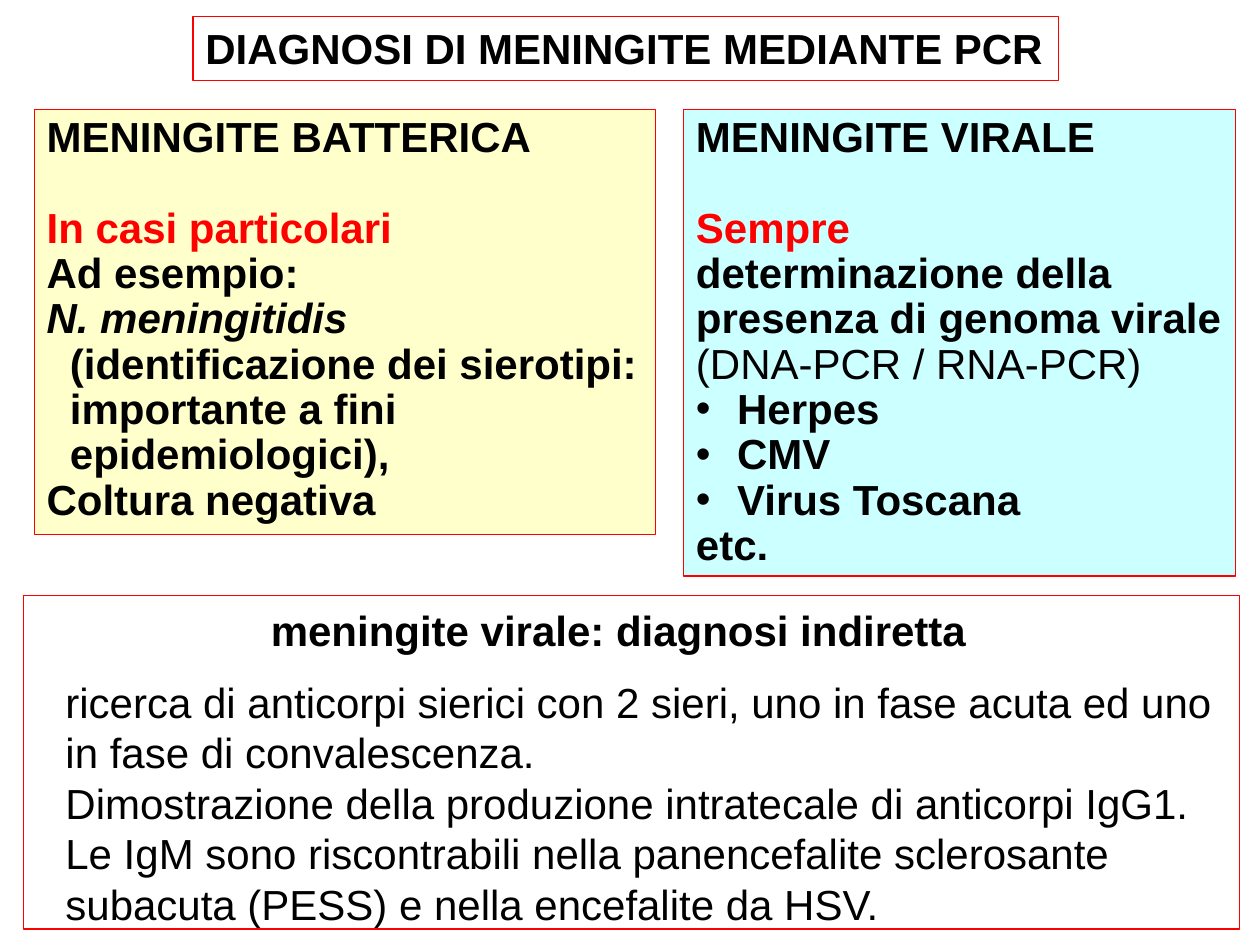
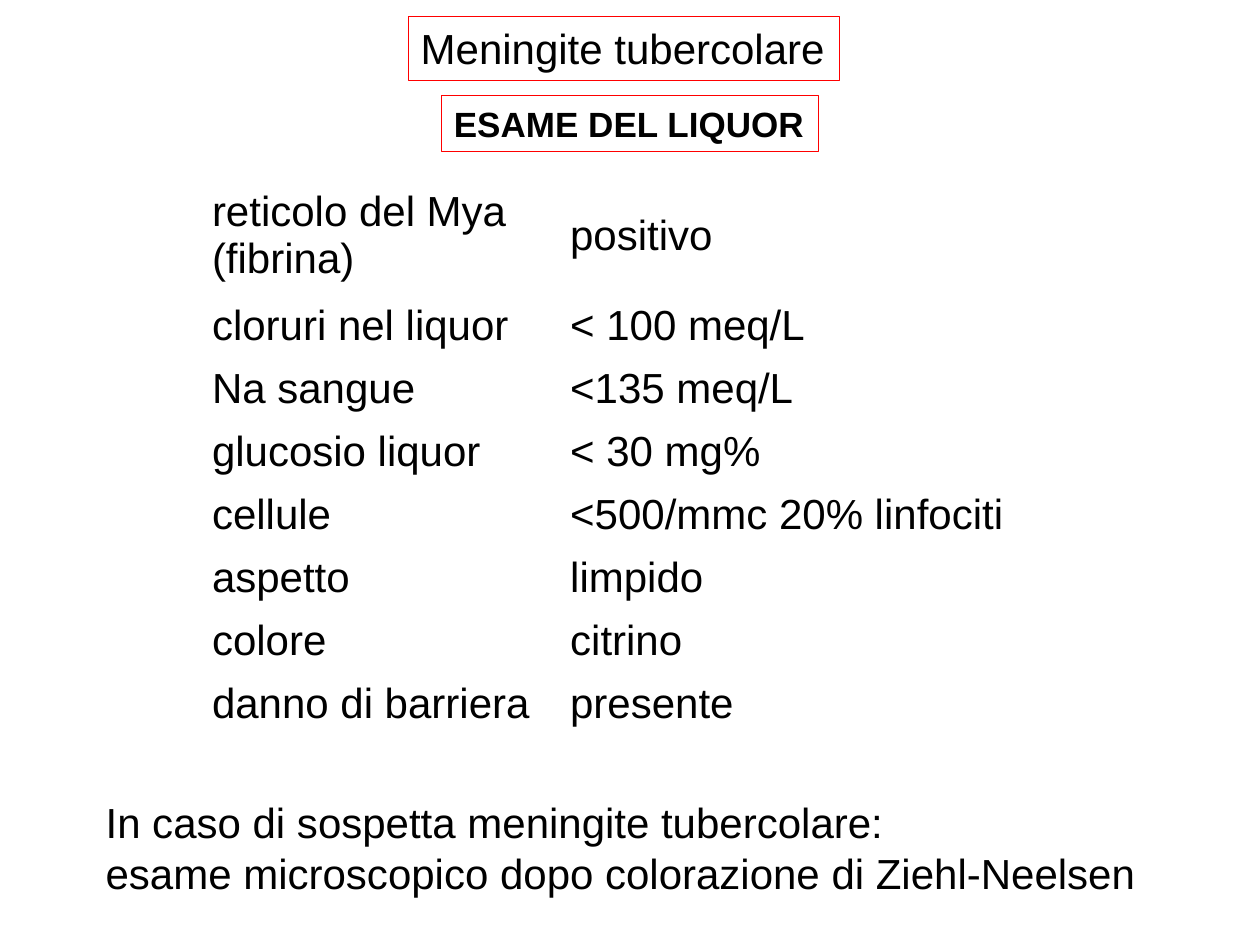
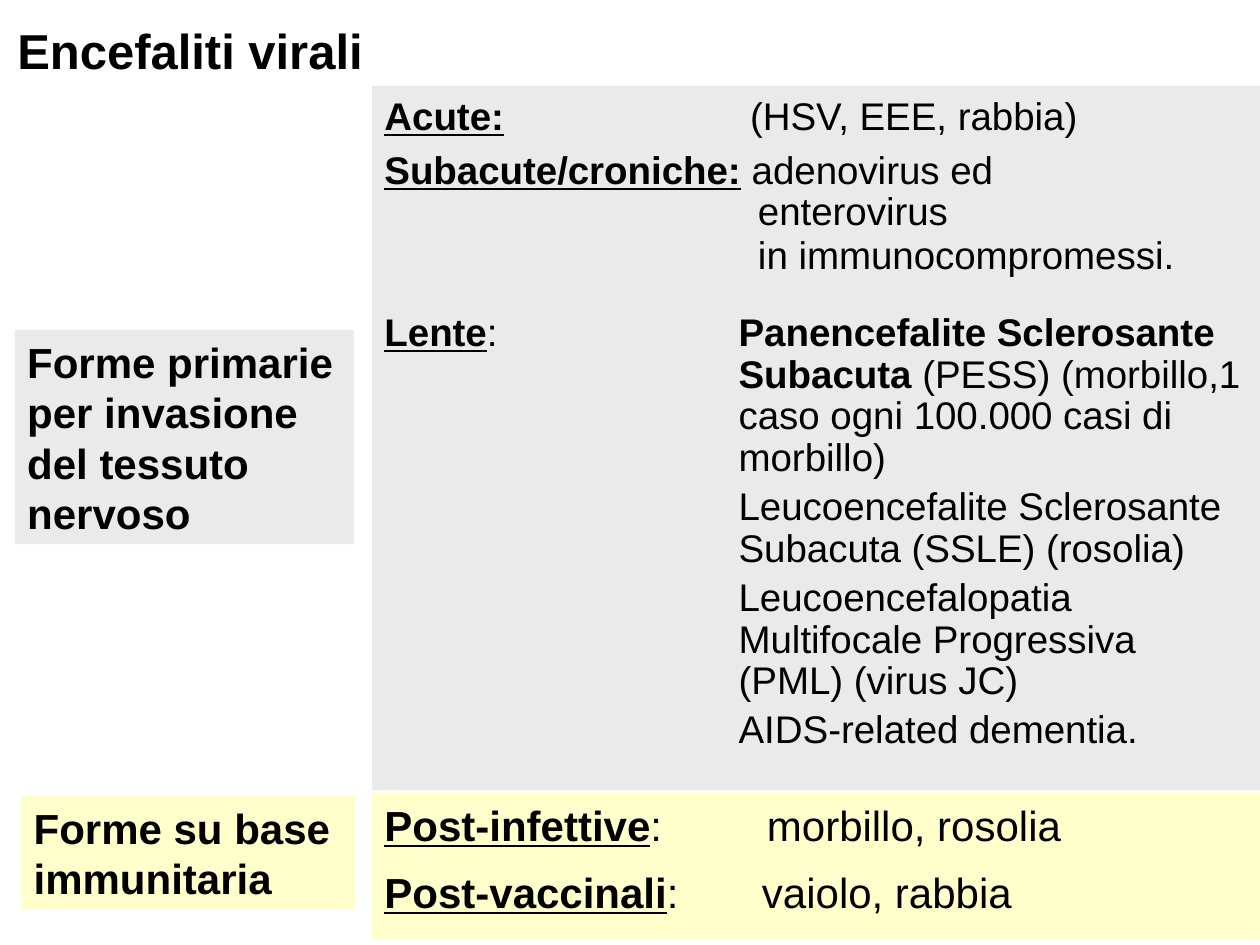
from lxml import etree
from pptx import Presentation
from pptx.dml.color import RGBColor
from pptx.enum.shapes import MSO_SHAPE
from pptx.enum.text import MSO_ANCHOR, MSO_AUTO_SIZE, PP_ALIGN
from pptx.oxml.ns import qn
from pptx.util import Cm, Pt

BLACK = RGBColor(0x00, 0x00, 0x00)
RED = RGBColor(0xFF, 0x00, 0x00)
CYAN = RGBColor(0xCC, 0xFF, 0xFF)
YELLOW = RGBColor(0xFF, 0xFF, 0xCC)
GRAY = RGBColor(0xEA, 0xEA, 0xEA)

FONT = "Arial"
TIGHT = 0.9
TITLE_ONLY = 5
TWO_CONTENT = 3

LIQUOR_ROWS = [
    ("reticolo del Mya\n(fibrina)", "positivo"),
    ("cloruri nel liquor", "< 100 meq/L"),
    ("Na sangue", "<135 meq/L"),
    ("glucosio liquor", "< 30 mg%"),
    ("cellule", "<500/mmc 20% linfociti"),
    ("aspetto", "limpido"),
    ("colore", "citrino"),
    ("danno di barriera", "presente"),
]


def add_text(paragraph, text, size=24, bold=False, italic=False, underline=False, color=BLACK):
    run = paragraph.add_run()
    run.text = text
    font = run.font
    font.name, font.size = FONT, Pt(size)
    font.bold, font.italic, font.underline = bold, italic, underline
    font.color.rgb = color


def add_paragraph(frame, text, spacing=1.0, before=0, margin=0, indent=0,
                  bullet=False, **text_format):
    paragraph = frame.paragraphs[0]
    if paragraph.runs:
        paragraph = frame.add_paragraph()
    properties = paragraph._p.get_or_add_pPr()
    properties.set("marL", str(Cm(margin)))
    properties.set("indent", str(Cm(indent)))
    if bullet:
        etree.SubElement(properties, qn("a:buChar")).set("char", "•")
    else:
        etree.SubElement(properties, qn("a:buNone"))
    paragraph.alignment = PP_ALIGN.LEFT
    paragraph.line_spacing = spacing
    paragraph.space_before = Pt(before)
    paragraph.space_after = Pt(0)
    add_text(paragraph, text, **text_format)
    return paragraph


def format_box(shape, fill=None, line=None):
    if fill is None:
        shape.fill.background()
    else:
        shape.fill.solid()
        shape.fill.fore_color.rgb = fill
    if line is None:
        shape.line.fill.background()
    else:
        shape.line.color.rgb = line
        shape.line.width = Pt(0.75)
    frame = shape.text_frame
    frame.word_wrap = True
    frame.auto_size = MSO_AUTO_SIZE.NONE
    frame.vertical_anchor = MSO_ANCHOR.TOP
    frame.margin_left = frame.margin_right = Cm(0.25)
    frame.margin_top = frame.margin_bottom = Cm(0.13)
    return frame


def fill_placeholder(placeholder, left, top, width, height, **box_format):
    placeholder.left, placeholder.top = Cm(left), Cm(top)
    placeholder.width, placeholder.height = Cm(width), Cm(height)
    return format_box(placeholder, **box_format)


def add_title(slide, text, left, top, width, height, line=RED, **text_format):
    frame = fill_placeholder(slide.shapes.title, left, top, width, height, line=line)
    add_paragraph(frame, text, **text_format)


def add_box(slide, left, top, width, height, **box_format):
    shape = slide.shapes.add_shape(
        MSO_SHAPE.RECTANGLE, Cm(left), Cm(top), Cm(width), Cm(height))
    shape.shadow.inherit = False
    return format_box(shape, **box_format)


def add_text_box(slide, left, top, width, height):
    return format_box(slide.shapes.add_textbox(Cm(left), Cm(top), Cm(width), Cm(height)))


def add_plain_table(slide, rows, left, top, column_widths, row_heights):
    table = slide.shapes.add_table(
        len(rows), len(column_widths), Cm(left), Cm(top),
        Cm(sum(column_widths)), Cm(sum(row_heights))).table
    table.first_row = table.horz_banding = False
    for column, width in zip(table.columns, column_widths):
        column.width = Cm(width)
    for row, height, values in zip(table.rows, row_heights, rows):
        row.height = Cm(height)
        for cell, value in zip(row.cells, values):
            cell.fill.background()
            cell.vertical_anchor = MSO_ANCHOR.MIDDLE
            for line in value.split("\n"):
                add_paragraph(cell.text_frame, line)


def build_pcr_slide(presentation):
    slide = presentation.slides.add_slide(presentation.slide_layouts[TWO_CONTENT])
    add_title(slide, "DIAGNOSI DI MENINGITE MEDIANTE PCR", 3.89, 0.33, 17.45, 1.3, bold=True)

    bacterial = fill_placeholder(
        slide.placeholders[1], 0.69, 2.21, 12.52, 8.56, fill=YELLOW, line=RED)
    add_paragraph(bacterial, "MENINGITE BATTERICA", TIGHT, bold=True)
    add_paragraph(bacterial, "In casi particolari", TIGHT, before=26, bold=True, color=RED)
    add_paragraph(bacterial, "Ad esempio:", TIGHT, bold=True)
    add_paragraph(bacterial, "N. meningitidis", TIGHT, bold=True, italic=True)
    for text in ("(identificazione dei sierotipi:", "importante a fini", "epidemiologici),"):
        add_paragraph(bacterial, text, TIGHT, margin=0.47, bold=True)
    add_paragraph(bacterial, "Coltura negativa", TIGHT, bold=True)

    viral = fill_placeholder(
        slide.placeholders[2], 13.78, 2.21, 11.13, 9.4, fill=CYAN, line=RED)
    add_paragraph(viral, "MENINGITE VIRALE", TIGHT, bold=True)
    add_paragraph(viral, "Sempre", TIGHT, before=26, bold=True, color=RED)
    add_paragraph(viral, "determinazione della", TIGHT, bold=True)
    add_paragraph(viral, "presenza di genoma virale", TIGHT, bold=True)
    add_paragraph(viral, "(DNA-PCR / RNA-PCR)", TIGHT)
    for virus in ("Herpes", "CMV", "Virus Toscana"):
        add_paragraph(viral, virus, TIGHT, margin=0.83, indent=-0.83, bullet=True, bold=True)
    add_paragraph(viral, "etc.", TIGHT, bold=True)

    antibodies = add_text_box(slide, 1.07, 13.51, 23.7, 5.33)
    for text in (
        "ricerca di anticorpi sierici con 2 sieri, uno in fase acuta ed uno in fase di convalescenza.",
        "Dimostrazione della produzione intratecale di anticorpi IgG1.",
        "Le IgM sono riscontrabili nella panencefalite sclerosante subacuta (PESS) "
        "e nella encefalite da HSV.",
    ):
        add_paragraph(antibodies, text)
    heading = add_text_box(slide, 5.21, 11.96, 14.88, 1.4)
    add_paragraph(heading, "meningite virale: diagnosi indiretta", 1.1, bold=True)
    add_box(slide, 0.48, 12, 24.51, 6.73, line=RED)


def build_tubercular_slide(presentation):
    slide = presentation.slides.add_slide(presentation.slide_layouts[TITLE_ONLY])
    add_title(slide, "Meningite tubercolare", 8.23, 0.33, 8.69, 1.3)
    add_plain_table(slide, LIQUOR_ROWS, 4.02, 3.57, (7.22, 10.14), [2.36] + [1.27] * 7)
    suspicion = add_text_box(slide, 1.88, 15.93, 21.4, 2.29)
    add_paragraph(suspicion, "In caso di sospetta meningite tubercolare:")
    add_paragraph(suspicion, "esame microscopico dopo colorazione di Ziehl-Neelsen")
    exam = add_box(slide, 8.9, 1.93, 7.6, 1.12, line=RED)
    add_paragraph(exam, "ESAME DEL LIQUOR", size=20, bold=True)


def build_encephalitis_slide(presentation):
    slide = presentation.slides.add_slide(presentation.slide_layouts[TWO_CONTENT])
    add_title(slide, "Encefaliti virali", 0.1, 0.28, 7.49, 1.45, line=None, size=28, bold=True)

    primary = fill_placeholder(slide.placeholders[1], 7.5, 1.73, 17.9, 14.2, fill=GRAY)
    label = {"size": 22, "bold": True, "underline": True}
    acute = add_paragraph(primary, "Acute:", margin=7.37, indent=-7.37, **label)
    add_text(acute, "\t(HSV, EEE, rabbia)", size=22)
    subacute = add_paragraph(primary, "Subacute/croniche:", before=4.4, **label)
    add_text(subacute, " adenovirus ed", size=22)
    for text, spacing in (("enterovirus", 0.7), ("in immunocompromessi.", 0.8)):
        add_paragraph(primary, text, spacing, before=4.4, margin=7.53, size=22)
    slow = add_paragraph(
        primary, "Lente", TIGHT, before=20.8, margin=7.14, indent=-7.14, **label)
    add_text(slow, ":\t", size=22)
    add_text(slow, "Panencefalite Sclerosante Subacuta", size=22, bold=True)
    add_text(slow, " (PESS) (morbillo,1 caso ogni 100.000 casi di morbillo)", size=22)
    for disease in (
        "Leucoencefalite Sclerosante Subacuta (SSLE) (rosolia)",
        "Leucoencefalopatia Multifocale Progressiva (PML) (virus JC)",
        "AIDS-related dementia.",
    ):
        add_paragraph(primary, disease, TIGHT, before=4.4, margin=7.14, size=22)

    immune = fill_placeholder(slide.placeholders[2], 7.5, 15.98, 17.9, 2.97, fill=YELLOW)
    for name, causes, start, before in (
        ("Post-infettive", "morbillo, rosolia", 7.71, 0),
        ("Post-vaccinali", "vaiolo, rabbia", 7.61, 9.5),
    ):
        paragraph = add_paragraph(
            immune, name, before=before, margin=start, indent=-start, bold=True, underline=True)
        add_text(paragraph, f":\t{causes}")

    primary_label = add_box(slide, 0.3, 6.65, 6.83, 4.32, fill=GRAY)
    add_paragraph(primary_label, "Forme primarie", bold=True)
    add_paragraph(primary_label, "per invasione del tessuto nervoso", bold=True)
    immune_label = add_box(slide, 0.43, 16.05, 6.73, 2.29, fill=YELLOW)
    add_paragraph(immune_label, "Forme su base", bold=True)
    add_paragraph(immune_label, "immunitaria", bold=True)


def main():
    presentation = Presentation()
    presentation.slide_width = Cm(25.4)
    presentation.slide_height = Cm(19.05)
    build_pcr_slide(presentation)
    build_tubercular_slide(presentation)
    build_encephalitis_slide(presentation)
    presentation.save("out.pptx")


if __name__ == "__main__":
    main()
